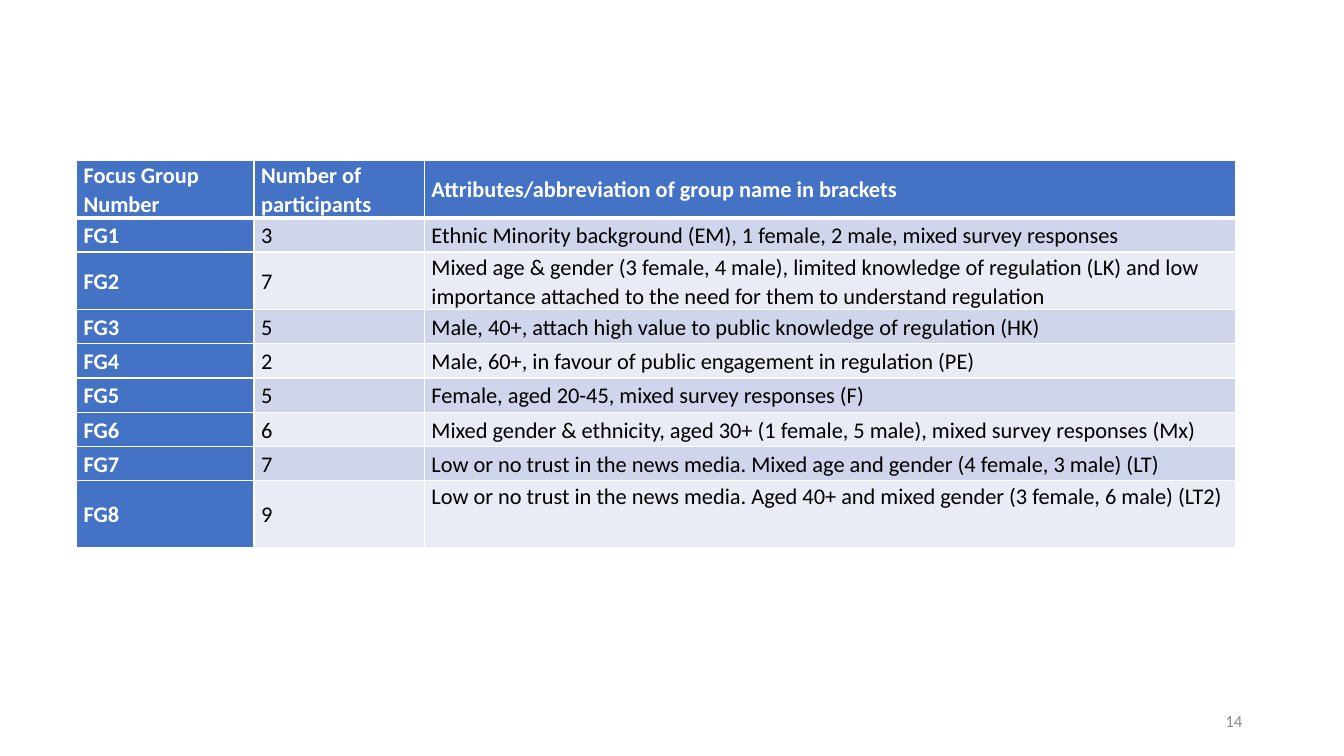
from lxml.etree import SubElement
from pptx import Presentation
from pptx.dml.color import RGBColor
from pptx.enum.text import MSO_ANCHOR, PP_ALIGN
from pptx.oxml.ns import qn
from pptx.util import Inches, Pt

WHITE = RGBColor(0xFF, 0xFF, 0xFF)
BLACK = RGBColor(0x00, 0x00, 0x00)
BLUE = RGBColor(0x44, 0x72, 0xC4)
BAND_DARK = RGBColor(0xCF, 0xD5, 0xEA)
BAND_LIGHT = RGBColor(0xE9, 0xEB, 0xF5)
GREY = RGBColor(0x8C, 0x8C, 0x8C)

COLUMN_WIDTHS = [1.76, 1.69, 8.05]
ROW_HEIGHTS = [0.57, 0.34, 0.57] + [0.34] * 5 + [0.66]
HEADINGS = (
    "Focus Group Number",
    "Number of participants",
    "Attributes/abbreviation of group name in brackets",
)
FOCUS_GROUPS = [
    ("3", "Ethnic Minority background (EM), 1 female, 2 male, mixed survey responses"),
    ("7", "Mixed age & gender (3 female, 4 male), limited knowledge of regulation (LK) "
          "and low importance attached to the need for them to understand regulation"),
    ("5", "Male, 40+, attach high value to public knowledge of regulation (HK)"),
    ("2", "Male, 60+, in favour of public engagement in regulation (PE)"),
    ("5", "Female, aged 20-45, mixed survey responses (F)"),
    ("6", "Mixed gender & ethnicity, aged 30+ (1 female, 5 male), mixed survey responses (Mx)"),
    ("7", "Low or no trust in the news media. Mixed age and gender (4 female, 3 male) (LT)"),
    ("9", "Low or no trust in the news media. Aged 40+ and mixed gender (3 female, 6 male) (LT2)"),
]


class SlideBuilder:
    font_name = "Calibri"

    def __init__(self, slide):
        self.slide = slide

    def style_runs(self, paragraph, size, color, bold=False):
        for run in paragraph.runs:
            run.font.name = self.font_name
            run.font.size = Pt(size)
            run.font.bold = bold
            run.font.color.rgb = color

    def borders(self, cell, top=1, bottom=1):
        properties = cell._tc.get_or_add_tcPr()
        for side, width in (("lnL", 1), ("lnR", 1), ("lnT", top), ("lnB", bottom)):
            line = SubElement(properties, qn(f"a:{side}"), w=str(Pt(width)))
            fill = SubElement(line, qn("a:solidFill"))
            SubElement(fill, qn("a:srgbClr"), val=str(WHITE))

    def cell(self, cell, text, row, column):
        is_heading = row == 0 or column == 0
        self.borders(cell, top=3 if row == 1 else 1, bottom=3 if row == 0 else 1)
        cell.fill.solid()
        band = BAND_DARK if row % 2 else BAND_LIGHT
        cell.fill.fore_color.rgb = BLUE if is_heading else band
        cell.margin_left = cell.margin_right = Inches(0.07)
        cell.margin_top = cell.margin_bottom = 0
        cell.vertical_anchor = MSO_ANCHOR.MIDDLE
        cell.text_frame.text = text
        paragraph = cell.text_frame.paragraphs[0]
        paragraph.line_spacing = 1.07
        paragraph.space_after = Pt(4)
        self.style_runs(paragraph, 16, WHITE if is_heading else BLACK, is_heading)

    def table(self, left, top, rows):
        table = self.slide.shapes.add_table(
            len(rows), len(COLUMN_WIDTHS), Inches(left), Inches(top),
            Inches(sum(COLUMN_WIDTHS)), Inches(sum(ROW_HEIGHTS)),
        ).table
        table.first_col = True
        for column, width in zip(table.columns, COLUMN_WIDTHS):
            column.width = Inches(width)
        for row, height in zip(table.rows, ROW_HEIGHTS):
            row.height = Inches(height)
        for row, texts in enumerate(rows):
            for column, text in enumerate(texts):
                self.cell(table.cell(row, column), text, row, column)
        return table

    def page_number(self, text, left, top, width, height):
        frame = self.slide.shapes.add_textbox(
            Inches(left), Inches(top), Inches(width), Inches(height)
        ).text_frame
        frame.word_wrap = True
        frame.vertical_anchor = MSO_ANCHOR.MIDDLE
        frame.text = text
        frame.paragraphs[0].alignment = PP_ALIGN.RIGHT
        self.style_runs(frame.paragraphs[0], 12, GREY)


def main():
    presentation = Presentation()
    presentation.slide_width = Inches(13.33)
    presentation.slide_height = Inches(7.5)
    builder = SlideBuilder(presentation.slides.add_slide(presentation.slide_layouts[6]))
    builder.page_number("14", 9.42, 6.95, 3, 0.4)
    groups = [(f"FG{number}", *group) for number, group in enumerate(FOCUS_GROUPS, 1)]
    focus_table = builder.table(0.76, 1.59, [HEADINGS, *groups])
    focus_table.cell(len(groups), 2).vertical_anchor = MSO_ANCHOR.TOP
    presentation.save("out.pptx")


if __name__ == "__main__":
    main()
